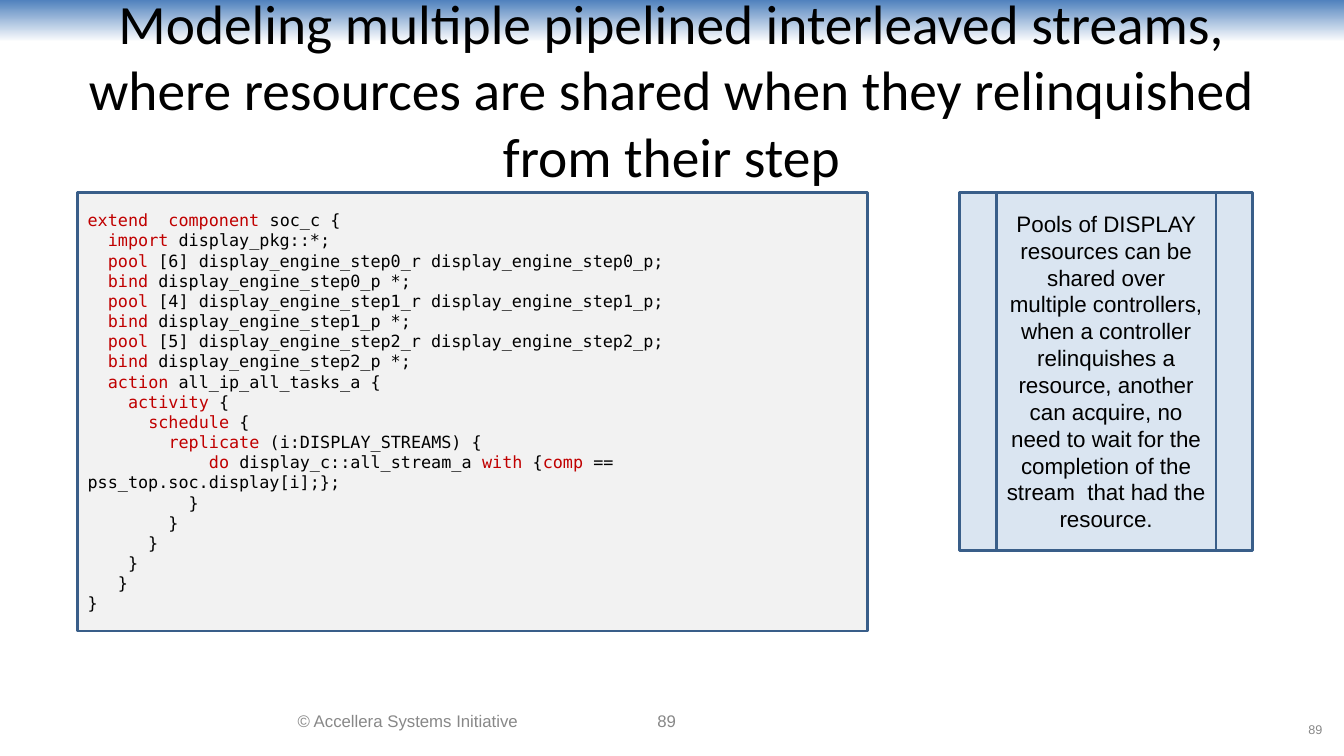
"""Build the slide on pipelined interleaved streams sharing resources."""
from dataclasses import dataclass

from pptx import Presentation
from pptx.dml.color import RGBColor
from pptx.enum.shapes import MSO_SHAPE
from pptx.enum.text import MSO_ANCHOR, MSO_AUTO_SIZE, PP_ALIGN
from pptx.shapes.autoshape import Shape
from pptx.slide import Slide
from pptx.util import Emu, Pt

PIXEL = 9525
BLACK, GREY, KEYWORD_RED, OUTLINE = "000000", "888888", "C00000", "395E89"
KEYWORD_MARK = "|"
TITLE = ("Modeling multiple pipelined interleaved streams, "
         "where resources are shared when they relinquished from their step")
POOLS_NOTE = ("Pools of DISPLAY resources can be shared over multiple controllers, "
              "when a controller relinquishes a resource, another can acquire, "
              "no need to wait for the completion of the stream  that had the resource.")

POOL_SIZES = (6, 4, 5)
POOL_LINES = "\n".join(
    f"  |pool| [{size}] display_engine_step{step}_r display_engine_step{step}_p;\n"
    f"  |bind| display_engine_step{step}_p *;"
    for step, size in enumerate(POOL_SIZES)
)
CODE = f"""|extend  component| soc_c {{
  |import| display_pkg::*;
{POOL_LINES}
  |action| all_ip_all_tasks_a {{
    |activity| {{
      |schedule| {{
        |replicate| (i:DISPLAY_STREAMS) {{
            |do| display_c::all_stream_a |with| {{|comp| == pss_top.soc.display[i];}};
          }}
        }}
      }}
    }}
   }}
}}"""


@dataclass(frozen=True)
class Box:
    """Position and size in px."""

    left: int
    top: int
    width: int
    height: int

    def emu(self) -> tuple[Emu, Emu, Emu, Emu]:
        """Return the four lengths in EMU."""
        return tuple(Emu(length * PIXEL)
                     for length in (self.left, self.top, self.width, self.height))


@dataclass(frozen=True)
class Panel:
    """A filled, outlined shape that holds text."""

    box: Box
    preset: MSO_SHAPE
    fill: str
    text: str
    font: str
    size: int
    align: PP_ALIGN


@dataclass(frozen=True)
class Label:
    """A grey footer text."""

    box: Box
    text: str
    size: int
    align: PP_ALIGN


PANELS = (
    Panel(Box(74, 183, 752, 418), MSO_SHAPE.RECTANGLE, "F2F2F2",
          CODE, "DejaVu Sans Mono", 12, PP_ALIGN.LEFT),
    Panel(Box(914, 183, 279, 341), MSO_SHAPE.FLOWCHART_PREDEFINED_PROCESS, "DAE5F1",
          POOLS_NOTE, "Arial", 16, PP_ALIGN.CENTER),
)
LABELS = (
    Label(Box(1230, 678, 39, 33), "89", 9, PP_ALIGN.RIGHT),
    Label(Box(234, 667, 309, 38), "© Accellera Systems Initiative", 12, PP_ALIGN.CENTER),
    Label(Box(512, 667, 246, 38), "89", 12, PP_ALIGN.CENTER),
)


def color(value: str) -> RGBColor:
    """Turn a hex string into a colour."""
    return RGBColor.from_string(value)


def write_text(shape: Shape, text: str, *, font: str, size: float,
               ink: str = BLACK, align: PP_ALIGN = PP_ALIGN.CENTER) -> None:
    """Write one paragraph per line, with marked keywords in red."""
    frame = shape.text_frame
    frame.word_wrap = True
    frame.auto_size = MSO_AUTO_SIZE.NONE
    frame.vertical_anchor = MSO_ANCHOR.MIDDLE
    for number, line in enumerate(text.split("\n")):
        paragraph = frame.add_paragraph() if number else frame.paragraphs[0]
        paragraph.alignment = align
        for position, piece in enumerate(line.split(KEYWORD_MARK)):
            if not piece:
                continue
            run = paragraph.add_run()
            run.text = piece
            run.font.name = font
            run.font.size = Pt(size)
            run.font.color.rgb = color(KEYWORD_RED if position % 2 else ink)


def add_title(slide: Slide) -> None:
    """Place and format the title placeholder."""
    title = slide.shapes.title
    title.left, title.top, title.width, title.height = Box(37, 16, 1205, 137).emu()
    write_text(title, TITLE, font="Calibri", size=39.6)


def add_header_band(slide: Slide) -> None:
    """Draw the gradient band behind the title."""
    band = slide.shapes.add_shape(MSO_SHAPE.RECTANGLE, *Box(0, 0, 1280, 40).emu())
    band.shadow.inherit = False
    band.line.fill.background()
    band.fill.gradient()
    band.fill.gradient_angle = 270
    for stop, value in zip(band.fill.gradient_stops, ("4F81BD", "FFFFFF")):
        stop.color.rgb = color(value)
    slide.shapes.title.element.addprevious(band.element)


def add_panel(slide: Slide, panel: Panel) -> None:
    """Draw a panel with its text."""
    shape = slide.shapes.add_shape(panel.preset, *panel.box.emu())
    shape.shadow.inherit = False
    shape.fill.solid()
    shape.fill.fore_color.rgb = color(panel.fill)
    shape.line.color.rgb = color(OUTLINE)
    shape.line.width = Pt(2)
    write_text(shape, panel.text, font=panel.font, size=panel.size, align=panel.align)


def add_label(slide: Slide, label: Label) -> None:
    """Draw a footer text."""
    shape = slide.shapes.add_textbox(*label.box.emu())
    write_text(shape, label.text, font="Arial", size=label.size, ink=GREY, align=label.align)


def main() -> None:
    """Build and save the presentation."""
    presentation = Presentation()
    presentation.slide_width = Emu(1280 * PIXEL)
    presentation.slide_height = Emu(720 * PIXEL)
    slide = presentation.slides.add_slide(presentation.slide_layouts.get_by_name("Title Only"))
    add_title(slide)
    add_header_band(slide)
    for panel in PANELS:
        add_panel(slide, panel)
    for label in LABELS:
        add_label(slide, label)
    presentation.save("out.pptx")


if __name__ == "__main__":
    main()
